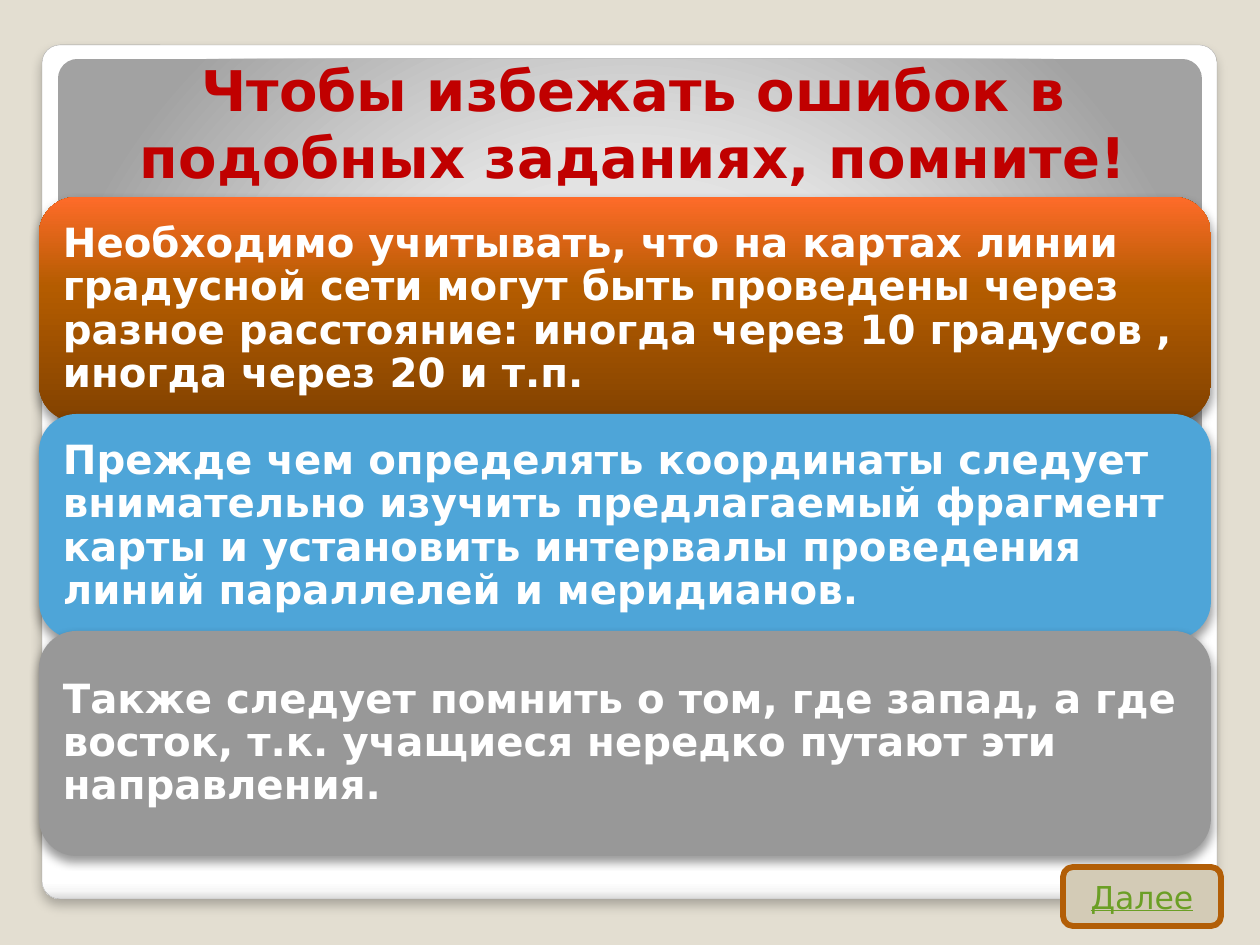
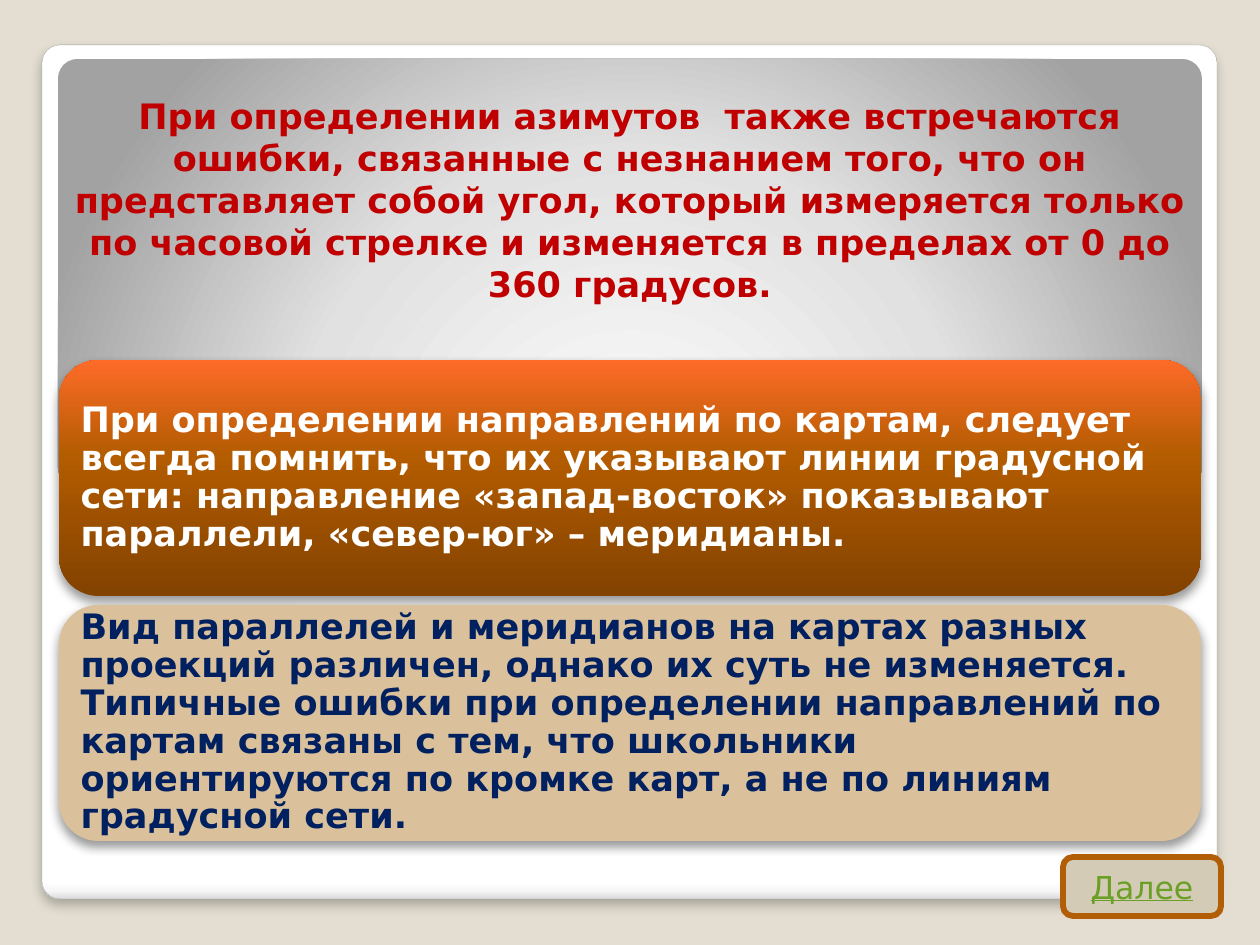
from lxml import etree
from pptx import Presentation
from pptx.dml.color import RGBColor
from pptx.enum import shapes, text
from pptx.oxml import ns
from pptx.util import Emu, Pt

PX = 914400 / 126
FONT = "DejaVu Sans"
COLORS = {
    "background": "E3DED1", "frame_line": "A4A4A4", "title": "C00000",
    "blue": "4EA5D8", "grey": "989898", "sand": "DAC19B",
    "white": "FFFFFF", "navy": "002060", "black": "000000",
    "button": "D3CBB6", "button_line": "B25E07", "link": "6B9F25",
}
# Gradients: stops as (percent, colour), then a linear angle or a circle's focus
GRADIENTS = {
    "frame": ([(0, "FFFFFF"), (98, "FFFFFF"), (99, "F7F7F7"), (100, "DADADA")], 90),
    "banner": ([(0, "FFFFFF"), (55, "E1E1E1"), (100, "A2A2A2")],
               {"l": 50, "t": 175, "r": 50, "b": -75}),
    "orange": ([(0, "824200"), (60, "B45C00"), (100, "FE6B29")], 270),
}
# Shadows: opacity in percent, blur and distance in points
FRAME_SHADOW = (25, 6, 4)
CARD_SHADOW = (40, 5.2, 3)


def px(value):
    return Emu(round(value * PX))


def rgb(name):
    return RGBColor.from_string(COLORS[name])


def child(parent, tag, **attrs):
    return etree.SubElement(parent, ns.qn(tag), {k: str(v) for k, v in attrs.items()})


def paint_gradient(sp, name):
    stops, direction = GRADIENTS[name]
    sp.fill.solid()
    spPr = sp.element.spPr
    solid = spPr.find(ns.qn("a:solidFill"))
    grad = child(spPr, "a:gradFill", rotWithShape=1)
    spPr.replace(solid, grad)
    stop_list = child(grad, "a:gsLst")
    for percent, color in stops:
        child(child(stop_list, "a:gs", pos=percent * 1000), "a:srgbClr", val=color)
    if isinstance(direction, dict):
        focus = {side: v * 1000 for side, v in direction.items()}
        child(child(grad, "a:path", path="circle"), "a:fillToRect", **focus)
    else:
        child(grad, "a:lin", ang=direction * 60000, scaled=0)


def cast_shadow(sp, opacity, blur, distance):
    effects = sp.element.spPr.find(ns.qn("a:effectLst"))
    outer = child(effects, "a:outerShdw", blurRad=Pt(blur), dist=Pt(distance),
                  dir=5400000, algn="t", rotWithShape=0)
    color = child(outer, "a:srgbClr", val=COLORS["black"])
    child(color, "a:alpha", val=opacity * 1000)


def add_panel(s, box, fill, line=None, line_pt=0, adj=None, shadow=None):
    sp = s.shapes.add_shape(shapes.MSO_SHAPE.ROUNDED_RECTANGLE, *map(px, box))
    sp.shadow.inherit = False
    if adj is not None:
        sp.adjustments[0] = adj
    if fill in GRADIENTS:
        paint_gradient(sp, fill)
    else:
        sp.fill.solid()
        sp.fill.fore_color.rgb = rgb(fill)
    if line:
        sp.line.color.rgb = rgb(line)
        sp.line.width = Pt(line_pt)
    else:
        sp.line.fill.background()
    if shadow:
        cast_shadow(sp, *shadow)
    return sp


def write(sp, words, size, color, align, anchor, insets, bold=True):
    tf = sp.text_frame
    tf.word_wrap = True
    tf.auto_size = text.MSO_AUTO_SIZE.NONE
    tf.vertical_anchor = anchor
    tf.margin_left = tf.margin_right = px(insets[0])
    tf.margin_top = tf.margin_bottom = px(insets[1])
    p = tf.paragraphs[0]
    p.alignment = align
    r = p.add_run()
    r.text = words
    r.font.name = FONT
    r.font.size = Pt(size)
    r.font.bold = bold
    r.font.color.rgb = rgb(color)
    return p, r


def dress_layout(prs, layout, s):
    """Set the backdrop and move the frame and banner onto the layout."""
    fill = prs.slide_master.background.fill
    fill.solid()
    fill.fore_color.rgb = rgb("background")
    frame = add_panel(s, (42, 45, 1175, 854), "frame", "frame_line", 0.16,
                      adj=0.021, shadow=FRAME_SHADOW)
    banner = add_panel(s, (58, 59, 1144, 428), "banner", adj=0.046)
    for sp in (frame, banner):
        layout.shapes.element.append(sp.element)


def place_title(s, box, words, size, anchor, insets):
    sp = s.shapes.title
    sp.left, sp.top, sp.width, sp.height = map(px, box)
    write(sp, words, size, "title", text.PP_ALIGN.CENTER, anchor, insets)


def stack_cards(s, box, gap, size, inset, cards):
    """Share the box's height equally among full-width cards."""
    left, top, width, height = box
    card_height = (height - gap * (len(cards) - 1)) / len(cards)
    for i, (fill, color, words) in enumerate(cards):
        card_top = top + i * (card_height + gap)
        card = add_panel(s, (left, card_top, width, card_height), fill,
                         shadow=CARD_SHADOW)
        p, _ = write(card, words, size, color, text.PP_ALIGN.LEFT,
                     text.MSO_ANCHOR.MIDDLE, (inset, inset))
        p.line_spacing = 0.9


def add_next_button(s, top):
    button = add_panel(s, (1063, top, 158, 59), "button", "button_line", 3.35)
    _, r = write(button, "Далее", 18, "link", text.PP_ALIGN.CENTER,
                 text.MSO_ANCHOR.MIDDLE, (13, 6), bold=False)
    r.font.underline = True


def coordinates_slide(s):
    place_title(s, (98, 98, 1071, 98),
                "Чтобы избежать ошибок в подобных заданиях, помните!",
                32, text.MSO_ANCHOR.BOTTOM, (6, 6))
    stack_cards(s, (39, 197, 1172, 659), -8, 23, 13, [
        ("orange", "white",
         "Необходимо учитывать, что на картах линии градусной сети могут быть "
         "проведены через разное расстояние: иногда через 10 градуcов , "
         "иногда через 20 и т.п."),
        ("blue", "white",
         "Прежде чем определять координаты следует внимательно изучить "
         "предлагаемый фрагмент карты и установить интервалы проведения "
         "линий параллелей и меридианов."),
        ("grey", "white",
         "Также следует помнить о том, где запад, а где восток, т.к. учащиеся "
         "нередко путают эти направления."),
    ])
    add_next_button(s, 867)


def azimuth_slide(s):
    place_title(s, (59, 88, 1142, 224),
                "При определении азимутов  также встречаются ошибки, связанные с "
                "незнанием того, что он представляет собой угол, который измеряется "
                "только по часовой стрелке и изменяется в пределах от 0 до "
                "360 градусов.",
                20, text.MSO_ANCHOR.TOP, (13, 6))
    stack_cards(s, (59, 360, 1142, 481), 9, 20, 10, [
        ("orange", "white",
         "При определении направлений по картам, следует всегда помнить, что их "
         "указывают линии градусной сети: направление «запад-восток» показывают "
         "параллели, «север-юг» – меридианы."),
        ("sand", "navy",
         "Вид параллелей и меридианов на картах разных проекций различен, однако "
         "их суть не изменяется. Типичные ошибки при определении направлений по "
         "картам связаны с тем, что школьники ориентируются по кромке карт, а не "
         "по линиям градусной сети."),
    ])
    add_next_button(s, 857)


def main():
    prs = Presentation()
    prs.slide_width, prs.slide_height = px(1260), px(945)
    layout = prs.slide_layouts.get_by_name("Title Only")
    slides = [prs.slides.add_slide(layout) for _ in range(2)]
    dress_layout(prs, layout, slides[0])
    coordinates_slide(slides[0])
    azimuth_slide(slides[1])
    prs.save("out.pptx")


if __name__ == "__main__":
    main()
